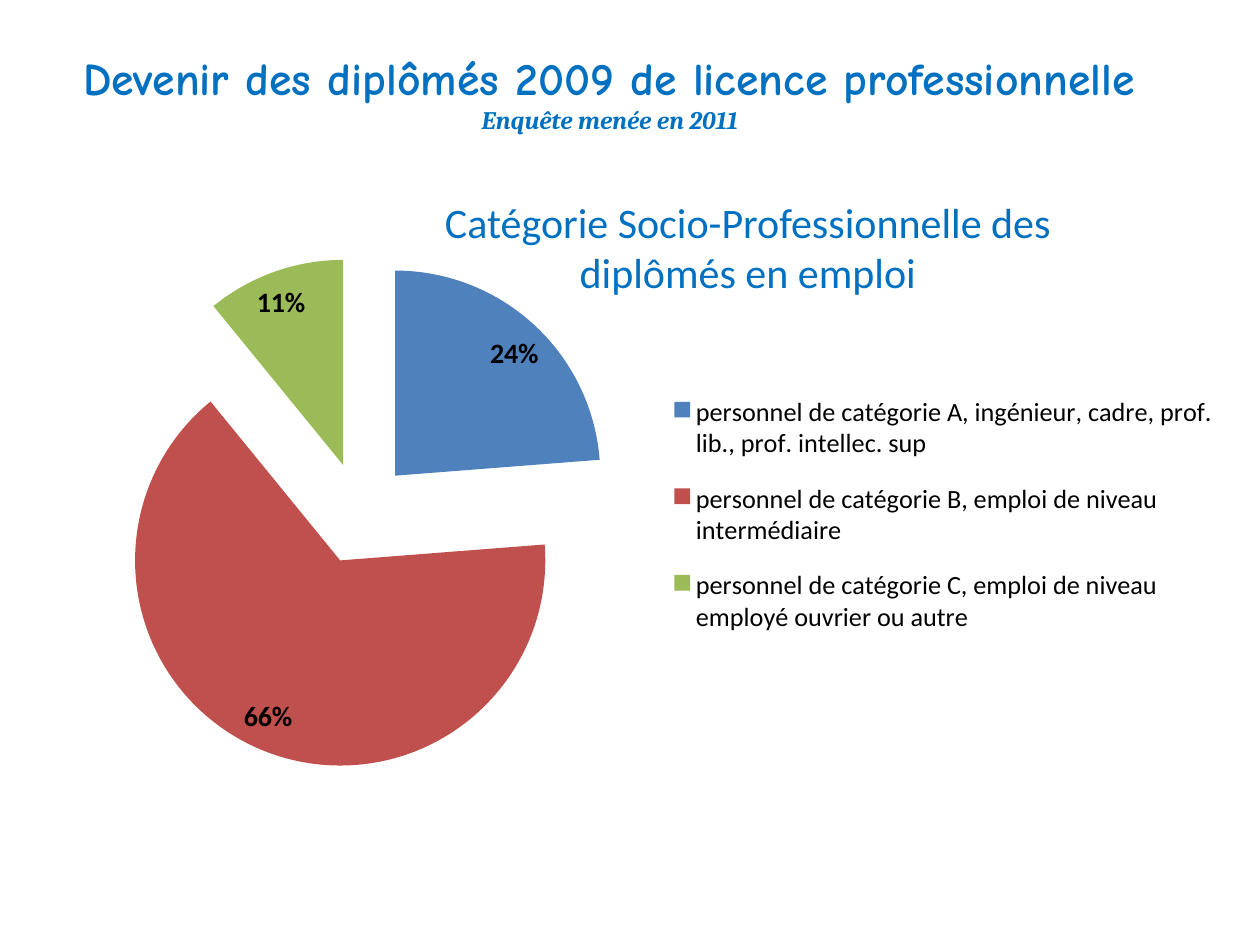
from lxml import etree
from pptx import Presentation, util as u
from pptx.chart.data import CategoryChartData
from pptx.dml.color import RGBColor
from pptx.enum import chart as ch, text
from pptx.oxml import parse_xml
from pptx.oxml.ns import nsdecls, qn

# Content
BLUE = "0070C0"
TITLE_LINES = [  # wording, font, size, italic
    ("Devenir des diplômés 2009 de licence professionnelle", "Comic Neue", 26.1, False),
    ("Enquête menée en 2011", "Cambria", 14.4, True),
]
HEADING = "Catégorie Socio-Professionnelle des diplômés en emploi"
CATEGORIES = [  # label, rounded share in percent, colour
    ("personnel de catégorie A, ingénieur, cadre, prof. lib., prof. intellec. sup", 24, "4F81BD"),
    ("personnel de catégorie B, emploi de niveau intermédiaire", 66, "C0504D"),
    ("personnel de catégorie C, emploi de niveau employé ouvrier ou autre", 11, "9BBB59"),
]
# Left, top, width, height in inches
TITLE_AREA = (0.35, 0.39, 8.98, 1.12)
HEADING_AREA = (2.89, 1.51, 6.09, 0.91)
CHART_AREA = (0.23, 1.41, 9.53, 5)
# Left, top, width, height in percent of the chart
PLOT_PERCENT = (0.1, 12.6, 55, 81.4)
LEGEND_PERCENT = (54.3, 31, 45, 45)


def inches(area):
    return [u.Inches(length) for length in area]


def set_font(font, name, size, colour, bold=False, italic=False):
    font.name, font.size = name, u.Pt(size)
    font.bold, font.italic = bold, italic
    font.color.rgb = RGBColor.from_string(colour)


def manual_layout(percents, inner=False):
    layout = parse_xml(f"<c:layout {nsdecls('c')}><c:manualLayout/></c:layout>")
    settings = [("layoutTarget", "inner")] if inner else []
    settings += [("xMode", "edge"), ("yMode", "edge")]
    settings += [(side, percent / 100) for side, percent in zip("xywh", percents)]
    for tag, value in settings:
        etree.SubElement(layout[0], qn(f"c:{tag}")).set("val", str(value))
    return layout


deck = Presentation()
deck.slide_width, deck.slide_height = u.Inches(10), u.Inches(7.5)
page = deck.slides.add_slide(deck.slide_layouts[5])

# Title and survey date
title = page.shapes.title
title.left, title.top, title.width, title.height = inches(TITLE_AREA)
frame = title.text_frame
frame.auto_size = text.MSO_AUTO_SIZE.NONE
frame.vertical_anchor = text.MSO_ANCHOR.MIDDLE
frame.margin_bottom = u.Inches(0.49)
frame.text = "\n".join(line[0] for line in TITLE_LINES)
for para, (_, name, size, italic) in zip(frame.paragraphs, TITLE_LINES):
    para.alignment = text.PP_ALIGN.CENTER
    para.space_before = u.Pt(0)
    set_font(para.font, name, size, BLUE, bold=True, italic=italic)

# Chart heading
box = page.shapes.add_textbox(*inches(HEADING_AREA))
box.text_frame.word_wrap = True
box.text_frame.text = HEADING
para = box.text_frame.paragraphs[0]
para.alignment = text.PP_ALIGN.CENTER
set_font(para.font, "Calibri", 24, BLUE)

# Exploded pie
labels, shares, colours = zip(*CATEGORIES)
data = CategoryChartData()
data.categories = labels
data.add_series("Series 1", shares)
chart = page.shapes.add_chart(ch.XL_CHART_TYPE.PIE_EXPLODED, *inches(CHART_AREA), data).chart
chart.has_title = False
set_font(chart.font, "Calibri", 10, "000000")
plot = chart.plots[0]
plot.vary_by_categories = True
series = plot.series[0]
for index, colour in enumerate(colours):
    fill = series.points[index].format.fill
    fill.solid()
    fill.fore_color.rgb = RGBColor.from_string(colour)
for explosion in series._element.findall(qn("c:explosion")):
    explosion.set("val", "25")

# Labels show the rounded shares, which add up to 101
plot.has_data_labels = True
percents = plot.data_labels
percents.show_value = True
percents.number_format, percents.number_format_is_linked = '0"%"', False
percents.position = ch.XL_LABEL_POSITION.BEST_FIT
set_font(percents.font, "Calibri", 16, "000000", bold=True)

# Legend and plot positions
chart.has_legend = True
legend = chart.legend
legend.position = ch.XL_LEGEND_POSITION.RIGHT
legend.include_in_layout = False
set_font(legend.font, "Calibri", 15, "000000")
plot_area = chart._chartSpace.chart.plotArea
for parent in (plot_area, legend._element):
    for old in parent.findall(qn("c:layout")):
        parent.remove(old)
plot_area.insert(0, manual_layout(PLOT_PERCENT, inner=True))
legend._element.find(qn("c:legendPos")).addnext(manual_layout(LEGEND_PERCENT))

deck.save("out.pptx")
